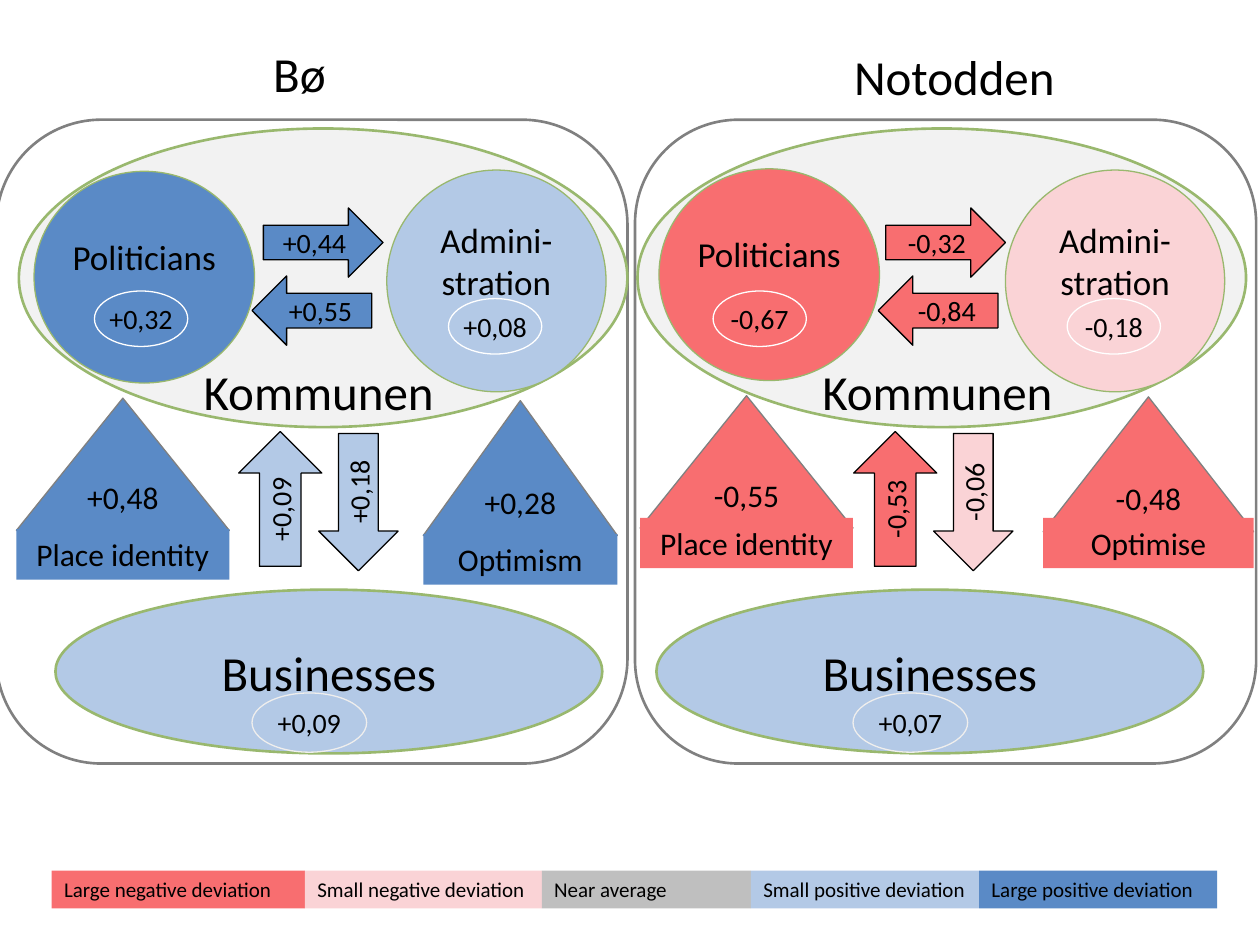
from pptx import Presentation
from pptx.dml.color import RGBColor
from pptx.enum.shapes import MSO_SHAPE as Shape
from pptx.enum.text import MSO_ANCHOR as Anchor, MSO_AUTO_SIZE as AutoSize, PP_ALIGN as Align
from pptx.util import Inches, Pt

BLACK = RGBColor(0x00, 0x00, 0x00)
WHITE = RGBColor(0xFF, 0xFF, 0xFF)
GREY = RGBColor(0x80, 0x80, 0x80)
GREEN = RGBColor(0x99, 0xB8, 0x6E)
PALE_GREY = RGBColor(0xF2, 0xF2, 0xF2)
OFF_WHITE = RGBColor(0xEF, 0xEE, 0xED)
LARGE_NEGATIVE = RGBColor(0xF8, 0x6E, 0x70)
SMALL_NEGATIVE = RGBColor(0xFA, 0xD3, 0xD6)
NEAR_AVERAGE = RGBColor(0xBF, 0xBF, 0xBF)
SMALL_POSITIVE = RGBColor(0xB3, 0xC9, 0xE6)
LARGE_POSITIVE = RGBColor(0x5A, 0x8A, 0xC6)

DEFAULT_INSETS = (0.1, 0.05, 0.1, 0.05)
ROLE_INSETS = (0.04, 0, 0.04, 0.33)


def write(item, text, size, align=Align.CENTER, anchor=Anchor.MIDDLE, insets=DEFAULT_INSETS):
    """Put one black Calibri paragraph into a shape or text box."""
    frame = item.text_frame
    frame.word_wrap = True
    frame.vertical_anchor = anchor
    if anchor == Anchor.TOP:
        frame.auto_size = AutoSize.SHAPE_TO_FIT_TEXT
    (frame.margin_left, frame.margin_top,
     frame.margin_right, frame.margin_bottom) = map(Inches, insets)
    paragraph = frame.paragraphs[0]
    paragraph.text = text
    paragraph.alignment = align
    paragraph.font.name = "Calibri"
    paragraph.font.size = Pt(size)
    paragraph.font.color.rgb = BLACK


def draw(slide, preset, box, fill=None, line=None, weight=0.75):
    """Add a flat preset shape; a missing fill or line is left off."""
    item = slide.shapes.add_shape(preset, *map(Inches, box))
    item.shadow.inherit = False
    if fill is None:
        item.fill.background()
    else:
        item.fill.solid()
        item.fill.fore_color.rgb = fill
    if line is None:
        item.line.fill.background()
    else:
        item.line.color.rgb = line
        item.line.width = Pt(weight)
    return item


def label(slide, box, text, align):
    """Add a 28 pt heading without a frame."""
    heading = slide.shapes.add_textbox(*map(Inches, box))
    write(heading, text, 28, align, Anchor.TOP)


def flow(slide, preset, box, score, rotation=0):
    """Add a block arrow carrying its score."""
    value, colour = score
    arrow = draw(slide, preset, box, colour, BLACK)
    arrow.rotation = rotation
    write(arrow, value, 16)


def role(slide, box, name, score, badge_box):
    """Add a circle for one part of the municipality with its score badge."""
    value, colour = score
    circle = draw(slide, Shape.OVAL, box, colour, GREEN)
    write(circle, name, 20, insets=ROLE_INSETS)
    badge = draw(slide, Shape.OVAL, badge_box, line=WHITE)
    write(badge, value, 16, insets=(0, 0, 0, 0))


def kommune(slide, left, top, politicians_at, flows_at, scores):
    """Draw the municipality ellipse with both roles and the flows between them."""
    draw(slide, Shape.OVAL, (left, top, 4.83, 2.37), PALE_GREY, GREEN, 1.5)
    politicians_left, politicians_top = politicians_at
    role(slide, (left + politicians_left, top + politicians_top, 1.75, 1.68),
         "Politicians", scores["politicians"], (left + 0.6, top + 1.29, 0.74, 0.44))
    role(slide, (left + 2.92, top + 0.33, 1.74, 1.76),
         "Admini-stration", scores["administration"], (left + 3.41, top + 1.35, 0.74, 0.44))
    right_flow, left_flow = flows_at
    flow(slide, Shape.RIGHT_ARROW, (left + right_flow, top + 0.63, 0.95, 0.55), scores["right"])
    flow(slide, Shape.LEFT_ARROW, (left + left_flow, top + 1.17, 0.95, 0.55), scores["left"])
    label(slide, (left + 1.21, top + 1.8, 2.34, 0.57), "Kommunen", Align.CENTER)


def exchange(slide, left, top, scores):
    """Draw the upward and downward flows between municipality and businesses."""
    flow(slide, Shape.RIGHT_ARROW, (left, top, 1.07, 0.66), scores["up"], 270)
    flow(slide, Shape.LEFT_ARROW, (left + 0.61, top + 0.04, 1.09, 0.63), scores["down"], 270)


def house(slide, left, top, width, roof, base_drop, name, score):
    """Draw a scored triangle standing on its named base."""
    value, colour = score
    gable = draw(slide, Shape.ISOSCELES_TRIANGLE, (left, top, width, roof), colour, GREY)
    write(gable, value, 18)
    base = draw(slide, Shape.RECTANGLE, (left, top + base_drop, width, 0.4), colour)
    write(base, name, 18, anchor=Anchor.TOP)


def businesses(slide, left, top, score):
    """Draw the businesses ellipse with its score badge."""
    value, colour = score
    ellipse = draw(slide, Shape.OVAL, (left, top, 4.34, 1.3), colour, GREEN, 1.5)
    write(ellipse, "Businesses", 28, insets=(0.04, 0, 0.04, 0))
    badge = draw(slide, Shape.OVAL, (left + 1.56, top + 0.82, 0.91, 0.47), line=OFF_WHITE)
    write(badge, value, 16, insets=(0.04, 0.05, 0.04, 0.05))


def panel(slide, left, top, width, town):
    """Draw the whole diagram of one town inside its rounded frame."""
    draw(slide, Shape.ROUNDED_RECTANGLE, (left, top, width, 5.11), WHITE, GREY, 1.5)
    scores = town["scores"]
    name, name_left, name_rise, name_width = town["title"]
    label(slide, (left + name_left, top - name_rise, name_width, 0.57), name, Align.LEFT)
    kommune(slide, left + town["kommune_left"], top + 0.07,
            town["politicians_at"], town["flows_at"], scores)
    for house_left, house_top, *rest in town["houses"]:
        house(slide, left + house_left, top + house_top, *rest)
    exchange(slide, left + town["exchange_left"], top + 2.68, scores)
    businesses(slide, left + town["businesses_left"], top + 3.73, scores["businesses"])


def legend(slide, left, top):
    """Draw the colour key as one row of touching labels."""
    entries = [
        ("Large negative deviation", LARGE_NEGATIVE, 2.01),
        ("Small negative deviation", SMALL_NEGATIVE, 1.88),
        ("Near average", NEAR_AVERAGE, 1.66),
        ("Small positive deviation", SMALL_POSITIVE, 1.81),
        ("Large positive deviation", LARGE_POSITIVE, 1.89),
    ]
    for meaning, colour, width in entries:
        key = draw(slide, Shape.RECTANGLE, (left, top, width, 0.3), colour)
        write(key, meaning, 12, Align.LEFT, Anchor.TOP)
        left += width


BO = {
    "title": ("Bø", 2.1, 0.65, 1.68),
    "kommune_left": 0.18,
    "politicians_at": (0.12, 0.34),
    "flows_at": (1.94, 1.85),
    "exchange_left": 1.72,
    "businesses_left": 0.47,
    "houses": [
        (0.16, 2.21, 1.69, 1.05, 1.04, "Place identity", ("+0,48", LARGE_POSITIVE)),
        (3.39, 2.23, 1.54, 1.07, 1.06, "Optimism", ("+0,28", LARGE_POSITIVE)),
    ],
    "scores": {
        "politicians": ("+0,32", LARGE_POSITIVE), "administration": ("+0,08", SMALL_POSITIVE),
        "right": ("+0,44", LARGE_POSITIVE), "left": ("+0,55", LARGE_POSITIVE),
        "up": ("+0,09", SMALL_POSITIVE), "down": ("+0,18", SMALL_POSITIVE),
        "businesses": ("+0,09", SMALL_POSITIVE),
    },
}
NOTODDEN = {
    "title": ("Notodden", 1.64, 0.63, 1.93),
    "kommune_left": 0.02,
    "politicians_at": (0.17, 0.32),
    "flows_at": (1.97, 1.91),
    "exchange_left": 1.53,
    "businesses_left": 0.17,
    "houses": [
        (0.04, 2.19, 1.69, 1.05, 0.97, "Place identity", ("-0,55", LARGE_NEGATIVE)),
        (3.24, 2.2, 1.67, 1.07, 0.96, "Optimise", ("-0,48", LARGE_NEGATIVE)),
    ],
    "scores": {
        "politicians": ("-0,67", LARGE_NEGATIVE), "administration": ("-0,18", SMALL_NEGATIVE),
        "right": ("-0,32", LARGE_NEGATIVE), "left": ("-0,84", LARGE_NEGATIVE),
        "up": ("-0,53", LARGE_NEGATIVE), "down": ("-0,06", SMALL_NEGATIVE),
        "businesses": ("+0,07", SMALL_POSITIVE),
    },
}


def main():
    """Build the comparison of the two towns and save it."""
    deck = Presentation()
    deck.slide_width, deck.slide_height = Inches(10), Inches(7.5)
    slide = deck.slides.add_slide(deck.slide_layouts[6])
    panel(slide, 5.04, 0.95, 4.93, NOTODDEN)
    legend(slide, 0.41, 6.91)
    panel(slide, -0.03, 0.95, 5.01, BO)
    deck.save("out.pptx")


if __name__ == "__main__":
    main()
